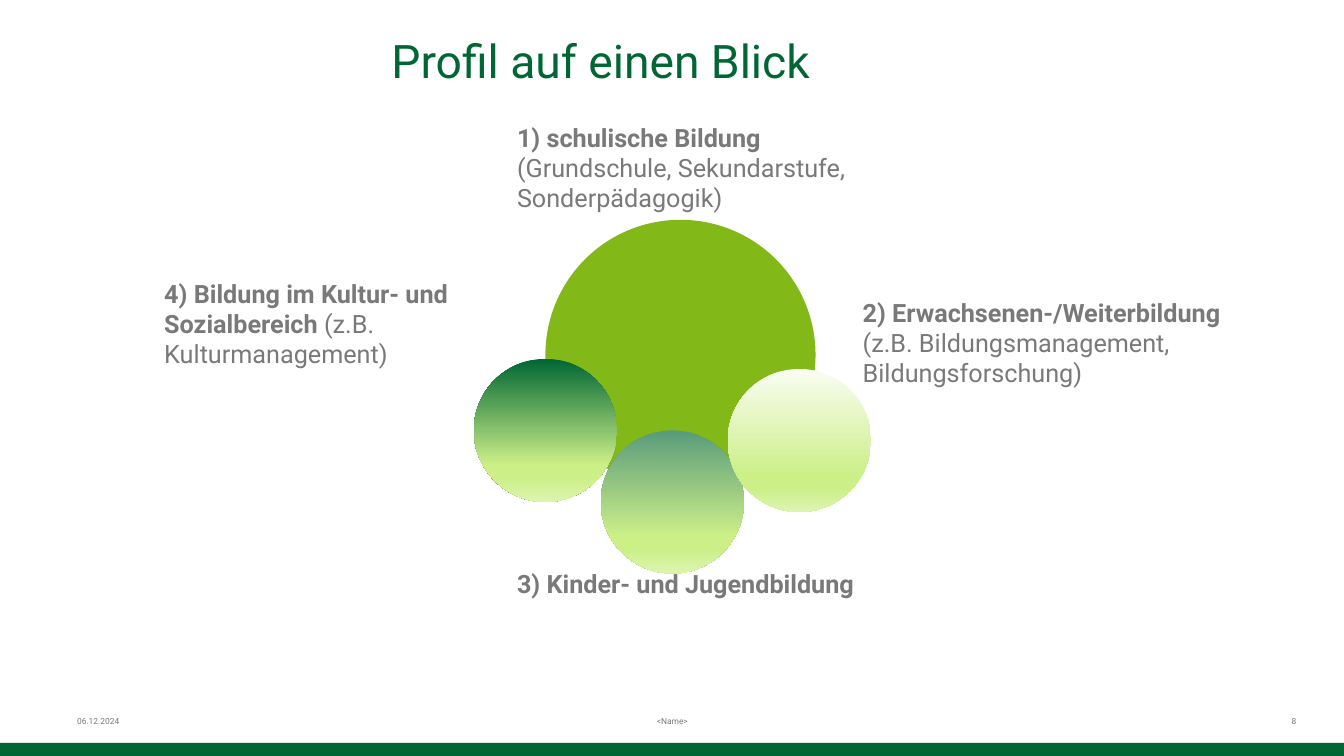
from typing import NamedTuple

from lxml.etree import SubElement
from pptx import Presentation
from pptx.dml.color import RGBColor
from pptx.enum.shapes import MSO_SHAPE as SHAPE
from pptx.enum.text import MSO_ANCHOR as ANCHOR, MSO_AUTO_SIZE as AUTO, PP_ALIGN as ALIGN
from pptx.oxml.ns import qn
from pptx.util import Inches, Pt

FONT = "Roboto"
WIDTH, HEIGHT = Inches(13.333), Inches(7.5)
DARK_GREEN = RGBColor(0x00, 0x66, 0x33)
LEAF_GREEN = RGBColor(0x83, 0xB8, 0x19)
SAGE = RGBColor(0x59, 0x9B, 0x7A)
MIST = RGBColor(0xF9, 0xFD, 0xF2)
LIME = RGBColor(0xCC, 0xEF, 0x88)
PALE_LIME = RGBColor(0xDD, 0xF4, 0xB0)
GREY = RGBColor(0x79, 0x79, 0x79)


class Box(NamedTuple):
    """Left, top, width and height in percent of the slide."""
    x: float
    y: float
    w: float
    h: float


class Part(NamedTuple):
    """A stretch of text with its weight."""
    text: str
    bold: bool = False


class Label(NamedTuple):
    """A text box with its paragraphs."""
    box: Box
    paragraphs: list[list[Part]]
    size: float = 18
    align: ALIGN = ALIGN.LEFT
    anchor: ANCHOR = ANCHOR.TOP
    right: float = 0.1


class Petal(NamedTuple):
    """A small circle with the top colour of its gradient."""
    y: float
    color: RGBColor


LABEL_X, LABEL_W, LABEL_H = 37.73, 28.58, 17.47
FOOT_Y, FOOT_W, FOOT_H = 92.67, 23.33, 5.33
PETAL_X, PETAL_STEP, PETAL_SIZE = 35.25, 9.45, 10.65
PETALS = [Petal(47.47, DARK_GREEN), Petal(56.93, SAGE), Petal(48.8, MIST)]
FOOTERS = [
    Label(Box(34.2, FOOT_Y, 31.65, FOOT_H), [[Part("<Name>")]], 6, ALIGN.CENTER, ANCHOR.MIDDLE),
    Label(Box(5, FOOT_Y, FOOT_W, FOOT_H), [[Part("06.12.2024")]], 6, ALIGN.LEFT, ANCHOR.MIDDLE),
    Label(Box(73.13, FOOT_Y, FOOT_W, FOOT_H), [[Part("8")]], 6, ALIGN.RIGHT, ANCHOR.MIDDLE, 0),
]
FIELDS = [
    Label(Box(LABEL_X, 15.47, LABEL_W, LABEL_H),
          [[Part("1) schulische Bildung", True)],
           [Part("(Grundschule, Sekundarstufe, Sonderpädagogik)")]]),
    Label(Box(LABEL_X, 74.53, LABEL_W, 9.47), [[Part("3) Kinder- und Jugendbildung", True)]]),
    Label(Box(63.45, 38.67, 33, LABEL_H),
          [[Part("2) Erwachsenen-/Weiterbildung", True)],
           [Part("(z.B. Bildungsmanagement, Bildungsforschung)")]]),
    Label(Box(11.48, 36.13, LABEL_W, LABEL_H),
          [[Part("4) Bildung im Kultur- und", True)],
           [Part("Sozialbereich ", True), Part("(z.B. Kulturmanagement)")]]),
]


def place(box: Box) -> tuple[int, int, int, int]:
    """Turn shares of the slide into lengths."""
    return (int(WIDTH * box.x / 100), int(HEIGHT * box.y / 100),
            int(WIDTH * box.w / 100), int(HEIGHT * box.h / 100))


def circle(x: float, y: float, size: float) -> Box:
    """Box of a circle whose diameter is a share of the slide width."""
    return Box(x, y, size, size * WIDTH / HEIGHT)


def add_plain(s, kind: SHAPE, box: Box, color: RGBColor):
    """Add a filled shape without line or shadow."""
    sp = s.shapes.add_shape(kind, *place(box))
    sp.shadow.inherit = False
    sp.line.fill.background()
    sp.fill.solid()
    sp.fill.fore_color.rgb = color
    return sp


def add_petal(s, box: Box, color: RGBColor) -> None:
    """Add a circle that fades downwards from the given colour."""
    sp = add_plain(s, SHAPE.OVAL, box, color)
    sp.fill.gradient()
    sp.fill.gradient_angle = 270
    stops = sp.element.spPr.find(qn("a:gradFill")).find(qn("a:gsLst"))
    for stop in list(stops):
        stops.remove(stop)
    for share, tint in ((0, color), (74, LIME), (83, LIME), (100, PALE_LIME)):
        stop = SubElement(stops, qn("a:gs"), pos=str(share * 1000))
        SubElement(stop, qn("a:srgbClr"), val=str(tint))


def style(p, size: float, color: RGBColor, align: ALIGN) -> None:
    """Set alignment and font of a paragraph."""
    p.alignment = align
    p.font.name, p.font.size = FONT, Pt(size)
    p.font.color.rgb = color


def add_label(s, label: Label) -> None:
    """Add a text box with plain and bold parts."""
    tf = s.shapes.add_textbox(*place(label.box)).text_frame
    tf.word_wrap = True
    tf.vertical_anchor = label.anchor
    tf.margin_right = Inches(label.right)
    for i, parts in enumerate(label.paragraphs):
        p = tf.add_paragraph() if i else tf.paragraphs[0]
        style(p, label.size, GREY, label.align)
        for part in parts:
            r = p.add_run()
            r.text, r.font.bold = part.text, part.bold


def set_title(s, text: str, box: Box) -> None:
    """Move and format the title placeholder."""
    title = s.shapes.title
    title.left, title.top, title.width, title.height = place(box)
    tf = title.text_frame
    tf.text = text
    tf.auto_size = AUTO.NONE
    tf.vertical_anchor = ANCHOR.TOP
    tf.margin_top = 0
    style(tf.paragraphs[0], 33, DARK_GREEN, ALIGN.CENTER)


def main() -> None:
    """Build the slide and save it."""
    prs = Presentation()
    prs.slide_width, prs.slide_height = WIDTH, HEIGHT
    s = prs.slides.add_slide(prs.slide_layouts[5])
    add_plain(s, SHAPE.RECTANGLE, Box(0, 98.27, 100, 1.73), DARK_GREEN)
    set_title(s, "Profil auf einen Blick", Box(15.6, 4.27, 58.2, 16.67))
    add_plain(s, SHAPE.OVAL, circle(40.58, 29.07, 20.1), LEAF_GREEN)
    for i, petal in enumerate(PETALS):
        add_petal(s, circle(PETAL_X + i * PETAL_STEP, petal.y, PETAL_SIZE), petal.color)
    for label in FOOTERS + FIELDS:
        add_label(s, label)
    prs.save("out.pptx")


if __name__ == "__main__":
    main()
